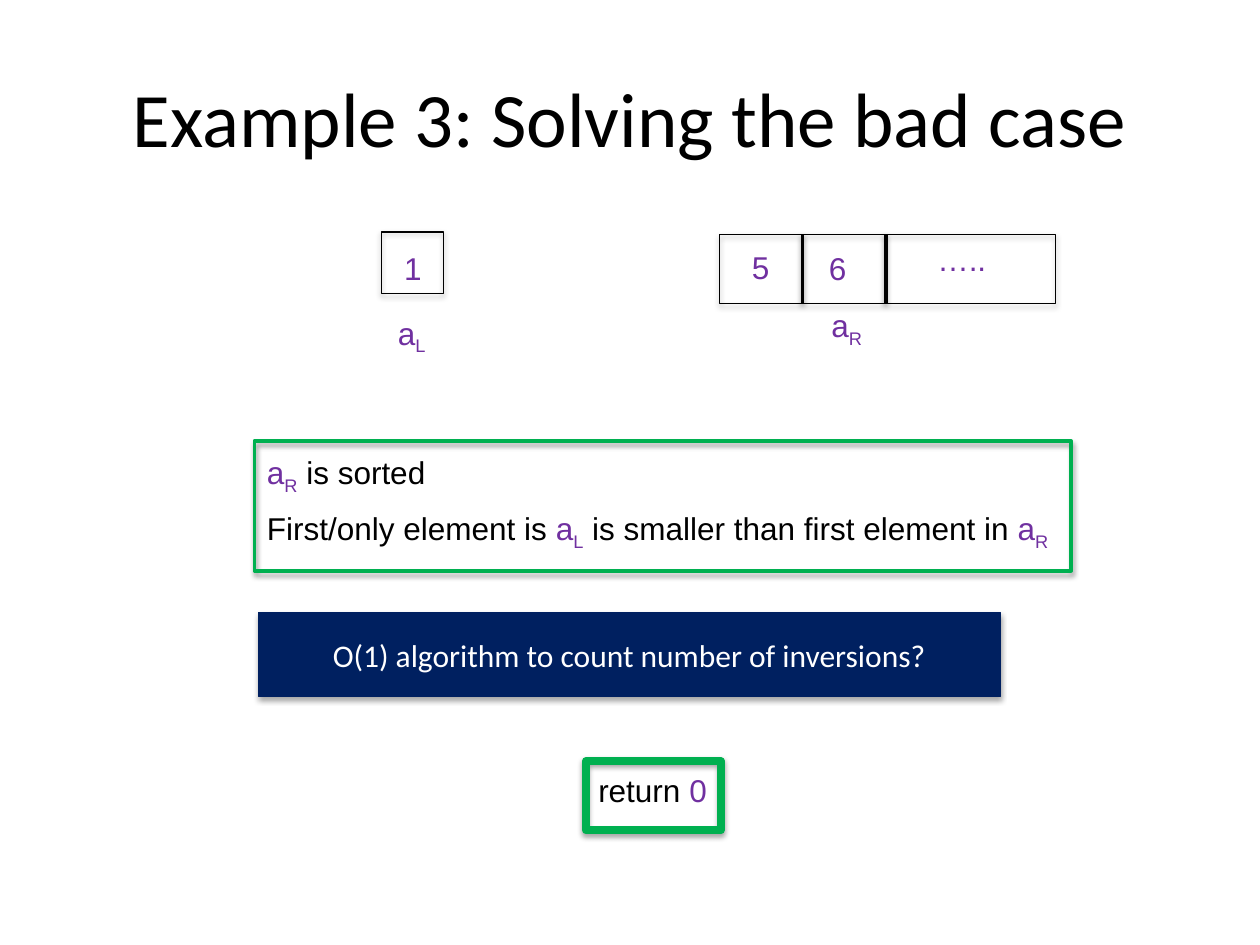
import lxml.etree
import pptx
import pptx.dml.color
import pptx.enum.shapes
import pptx.enum.text
import pptx.oxml.ns
import pptx.util

PX = 9144
BLACK, WHITE, PURPLE, GREEN, NAVY = "000000", "FFFFFF", "7030A0", "00B050", "002060"
ANCHOR = pptx.enum.text.MSO_ANCHOR
ALIGN = pptx.enum.text.PP_ALIGN
FIT = pptx.enum.text.MSO_AUTO_SIZE
qn = pptx.oxml.ns.qn


def rgb(value):
    return pptx.dml.color.RGBColor.from_string(value)


def outline(sp, color, width, alpha=35, dist=1.8):
    sp.line.color.rgb = rgb(color)
    sp.line.width = pptx.util.Pt(width)
    effects = lxml.etree.SubElement(sp._element.spPr, qn("a:effectLst"))
    shadow = lxml.etree.SubElement(effects, qn("a:outerShdw"), {
        "blurRad": str(pptx.util.Pt(3.1)), "dist": str(pptx.util.Pt(dist)),
        "dir": "5400000", "rotWithShape": "0"})
    clr = lxml.etree.SubElement(shadow, qn("a:srgbClr"), val=BLACK)
    lxml.etree.SubElement(clr, qn("a:alpha"), val=str(alpha * 1000))


prs = pptx.Presentation()
prs.slide_width, prs.slide_height = 1000 * PX, 750 * PX
s = prs.slides.add_slide(prs.slide_layouts[6])

boxes = [
    ((571, 186, 267, 55), None, BLACK, 0.75),
    ((303, 184, 49, 49), None, BLACK, 0.75),
    ((202, 350, 648, 103), None, GREEN, 2.25),
    ((205, 486, 589, 67), NAVY, NAVY, 0.75),
    ((465, 604, 107, 55), None, GREEN, 4.5),
]
for box, fill, color, width in boxes:
    sp = s.shapes.add_shape(pptx.enum.shapes.MSO_SHAPE.RECTANGLE, *[v * PX for v in box])
    if fill:
        sp.fill.solid()
        sp.fill.fore_color.rgb = rgb(fill)
    else:
        sp.fill.background()
    outline(sp, color, width)

for x in (637, 703):
    sp = s.shapes.add_connector(pptx.enum.shapes.MSO_CONNECTOR.STRAIGHT,
                                x * PX, 186 * PX, x * PX, 241 * PX)
    outline(sp, BLACK, 2, 38, 1.6)

title = {"size": pptx.util.Pt(44), "name": "Calibri"}
banner = {"size": pptx.util.Pt(18), "name": "Calibri"}
body = {"size": pptx.util.Pt(18), "name": "Arial"}
centred = {"word_wrap": True, "vertical_anchor": ANCHOR.MIDDLE}
label = {"word_wrap": False, "auto_size": FIT.SHAPE_TO_FIT_TEXT}
a = ("a", PURPLE, False)
sub_l, sub_r = ("L", PURPLE, True), ("R", PURPLE, True)

texts = [
    ((50, 30, 900, 125), title, centred, [("Example 3: Solving the bad case", BLACK, False)]),
    ((205, 486, 589, 67), banner, centred,
     [("O(1) algorithm to count number of inversions?", WHITE, False)]),
    ((587, 192, 34, 40), body, label, [("5", PURPLE, False)]),
    ((648, 193, 34, 40), body, label, [("6", PURPLE, False)]),
    ((734, 186, 59, 40), body, label, [("…..", PURPLE, False)]),
    ((311, 193, 34, 40), body, label, [("1", PURPLE, False)]),
    ((306, 244, 43, 40), body, label, [a, sub_l]),
    ((650, 238, 46, 40), body, label, [a, sub_r]),
    ((202, 355, 149, 40), body, label, [a, sub_r, (" is sorted", BLACK, False)]),
    ((202, 399, 648, 40), body, label,
     [("First/only element is ", BLACK, False), a, sub_l,
      (" is smaller than first element in ", BLACK, False), a, sub_r]),
    ((465, 607, 107, 40), body, label, [("return ", BLACK, False), ("0", PURPLE, False)]),
]
for box, font, frame, runs in texts:
    tf = s.shapes.add_textbox(*[v * PX for v in box]).text_frame
    for key, value in frame.items():
        setattr(tf, key, value)
    p = tf.paragraphs[0]
    p.alignment = ALIGN.CENTER if frame is centred else ALIGN.LEFT
    for text, color, subscript in runs:
        r = p.add_run()
        r.text = text
        for key, value in font.items():
            setattr(r.font, key, value)
        r.font.color.rgb = rgb(color)
        if subscript:
            r._r.get_or_add_rPr().set("baseline", "-25000")

prs.save("out.pptx")
